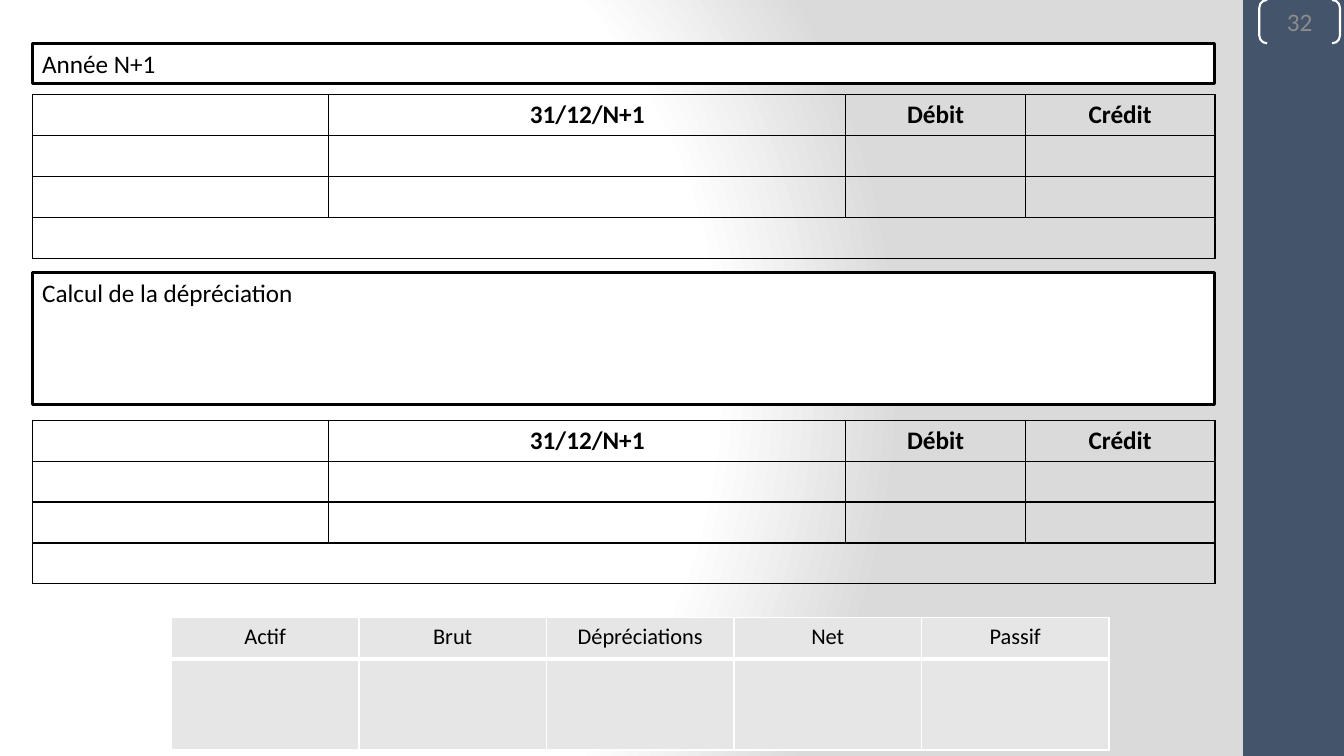
"""Build the year N+1 depreciation worksheet slide."""
from dataclasses import dataclass

from pptx import Presentation
from pptx.dml.color import RGBColor as Rgb
from pptx.enum.shapes import MSO_SHAPE as Form
from pptx.enum.text import MSO_ANCHOR as Anchor, PP_ALIGN as Align
from pptx.oxml import parse_xml as to_xml
from pptx.oxml.ns import nsdecls, qn
from pptx.util import Inches, Pt


@dataclass(frozen=True)
class Theme:
    font: str = "Calibri"
    black: str = "000000"
    white: str = "FFFFFF"
    navy: str = "44546A"
    gray: str = "8C8C8C"
    pale: str = "E7E6E6"
    shade: str = "DADADA"
    body: int = 18
    small: int = 16
    thin: float = 1
    thick: float = 3
    frame: float = 2
    mark: float = 1.5


class Sheet:
    def __init__(self, slide, theme):
        self.slide = slide
        self.theme = theme

    def back(self):
        theme = self.theme
        self.slide.background.fill.gradient()
        old = self.slide.element.find(".//" + qn("a:gradFill"))
        stops = [(0, theme.white), (75, theme.white), (100, theme.shade)]
        marks = "".join(
            f'<a:gs pos="{pos * 1000}"><a:srgbClr val="{color}"/></a:gs>'
            for pos, color in stops)
        old.getparent().replace(old, to_xml(
            f'<a:gradFill {nsdecls("a")} rotWithShape="1">'
            f'<a:gsLst>{marks}</a:gsLst><a:path path="circle">'
            '<a:fillToRect l="20000" t="50000" r="100000" b="50000"/>'
            '</a:path></a:gradFill>'))

    def label(self, frame, text, size, color, align, bold=False):
        para = frame.paragraphs[0]
        para.text = text
        para.alignment = align
        font = para.font
        font.name = self.theme.font
        font.size = Pt(size)
        font.bold = bold
        font.color.rgb = Rgb.from_string(color)

    def shape(self, form, area, fill=None, line=None, width=0):
        item = self.slide.shapes.add_shape(form, *map(Inches, area))
        item.shadow.inherit = False
        if fill:
            item.fill.solid()
            item.fill.fore_color.rgb = Rgb.from_string(fill)
        else:
            item.fill.background()
        if line:
            item.line.color.rgb = Rgb.from_string(line)
            item.line.width = Pt(width)
        else:
            item.line.fill.background()
        return item

    def panel(self, text, area):
        theme = self.theme
        item = self.shape(Form.RECTANGLE, area, theme.white, theme.black, theme.frame)
        frame = item.text_frame
        frame.word_wrap = True
        frame.vertical_anchor = Anchor.TOP
        self.label(frame, text, theme.body, theme.black, Align.LEFT)

    def number(self, text, area):
        theme = self.theme
        item = self.shape(Form.DOUBLE_BRACKET, area, None, theme.white, theme.mark)
        item.adjustments[0] = 0.18
        frame = item.text_frame
        frame.margin_left = frame.margin_right = 0
        frame.margin_top = frame.margin_bottom = 0
        frame.vertical_anchor = Anchor.MIDDLE
        self.label(frame, text, theme.body, theme.gray, Align.CENTER)

    def border(self, cell, color, base):
        props = cell._tc.get_or_add_tcPr()
        for side in "LRTB":
            width = Pt(base if side == "B" else self.theme.thin)
            props.append(to_xml(
                f'<a:ln{side} {nsdecls("a")} w="{width}"><a:solidFill>'
                f'<a:srgbClr val="{color}"/></a:solidFill></a:ln{side}>'))

    def grid(self, left, top, cols, rows, line, fill=None, base=1):
        table = self.slide.shapes.add_table(
            len(rows), len(cols), Inches(left), Inches(top),
            Inches(sum(cols)), Inches(sum(rows))).table
        table.first_row = table.horz_banding = False
        for col, width in zip(table.columns, cols):
            col.width = Inches(width)
        for row, height in zip(table.rows, rows):
            row.height = Inches(height)
        for index, row in enumerate(table.rows):
            for cell in row.cells:
                self.border(cell, line, self.theme.thin if index else base)
                if fill:
                    cell.fill.solid()
                    cell.fill.fore_color.rgb = Rgb.from_string(fill)
                else:
                    cell.fill.background()
        return table

    def head(self, table, labels, size, bold):
        for col, text in labels.items():
            self.label(table.cell(0, col).text_frame, text, size,
                       self.theme.black, Align.CENTER, bold)

    def entry(self, left, top):
        theme = self.theme
        table = self.grid(left, top, [0.96, 1.98, 0.88, 4.25, 1.78, 1.88],
                          [0.4] * 4, theme.black)
        for row in range(3):
            for col in (0, 2):
                table.cell(row, col).merge(table.cell(row, col + 1))
        table.cell(3, 0).merge(table.cell(3, 5))
        self.head(table, {2: "31/12/N+1", 4: "Débit", 5: "Crédit"}, theme.body, True)

    def balance(self, left, top):
        theme = self.theme
        labels = ["Actif", "Brut", "Dépréciations", "Net", "Passif"]
        table = self.grid(left, top, [1.86] * len(labels), [0.41, 0.9],
                          theme.white, theme.pale, theme.thick)
        self.head(table, dict(enumerate(labels)), theme.small, False)


def main():
    deck = Presentation()
    deck.slide_width, deck.slide_height = Inches(13.33), Inches(7.5)
    theme = Theme()
    sheet = Sheet(deck.slides.add_slide(deck.slide_layouts[6]), theme)
    left, width = 0.32, 11.73
    sheet.back()
    sheet.shape(Form.RECTANGLE, (12.33, 0, 1, 7.5), theme.navy)
    sheet.number("32", (12.49, 0, 0.8, 0.43))
    sheet.panel("Année N+1", (left, 0.43, width, 0.4))
    for top in (0.94, 4.17):
        sheet.entry(left, top)
    sheet.panel("Calcul de la dépréciation", (left, 2.7, width, 1.31))
    sheet.balance(1.7, 6.13)
    deck.save("out.pptx")


if __name__ == "__main__":
    main()
